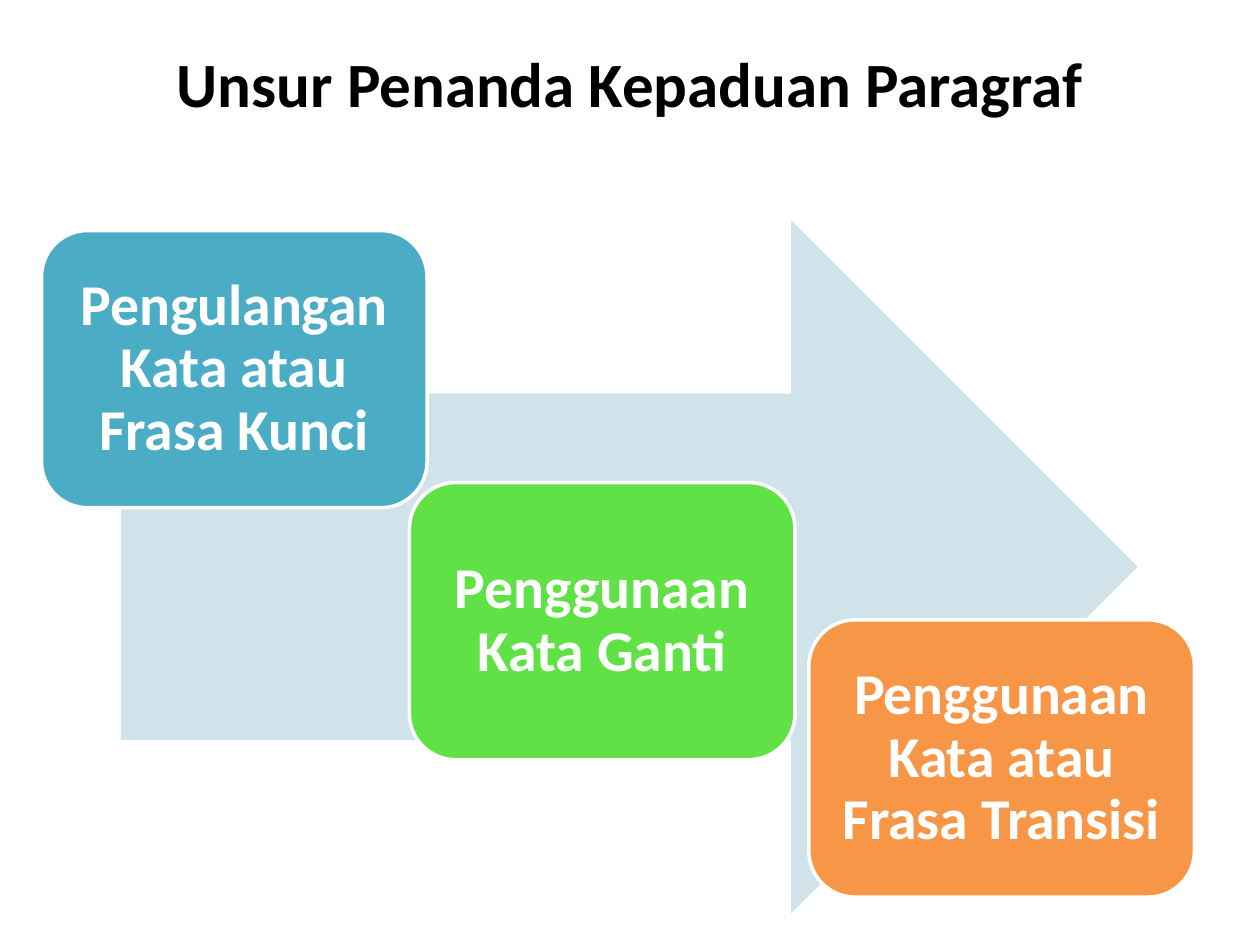
from dataclasses import dataclass

from pptx import Presentation
from pptx.dml.color import RGBColor
from pptx.enum.shapes import MSO_SHAPE as Shape
from pptx.enum.text import MSO_ANCHOR as Anchor, PP_ALIGN as Align
from pptx.util import Inches, Pt


@dataclass(frozen=True)
class Theme:
    font: str = "Calibri"
    title_size: int = 36
    card_size: int = 33
    black: str = "000000"
    white: str = "FFFFFF"
    arrow: str = "D0E3EA"
    blue: str = "4BACC6"
    green: str = "60E146"
    orange: str = "F79646"


class SlideBuilder:
    """Holds the theme and the slide being filled."""

    def __init__(self, deck, theme):
        self.theme = theme
        self.slide = deck.slides.add_slide(deck.slide_layouts[5])

    def set_text(self, frame, text, size, color):
        frame.text = text
        frame.word_wrap = True
        para = frame.paragraphs[0]
        para.alignment = Align.CENTER
        for span in para.runs:
            span.font.name = self.theme.font
            span.font.size = Pt(size)
            span.font.bold = True
            span.font.color.rgb = RGBColor.from_string(color)
        return para

    def title(self, text, left, top, width, height):
        box = self.slide.shapes.title
        box.left, box.top = Inches(left), Inches(top)
        box.width, box.height = Inches(width), Inches(height)
        box.text_frame.vertical_anchor = Anchor.TOP
        self.set_text(box.text_frame, text, self.theme.title_size, self.theme.black)

    def shape(self, kind, left, top, width, height, fill):
        shape = self.slide.shapes.add_shape(
            kind, Inches(left), Inches(top), Inches(width), Inches(height))
        shape.shadow.inherit = False
        shape.fill.solid()
        shape.fill.fore_color.rgb = RGBColor.from_string(fill)
        shape.line.fill.background()
        return shape

    def card(self, text, left, top, fill):
        card = self.shape(Shape.ROUNDED_RECTANGLE, left, top, 3.06, 2.2, fill)
        card.line.color.rgb = RGBColor.from_string(self.theme.white)
        card.line.width = Pt(2)
        frame = card.text_frame
        frame.margin_left = frame.margin_right = Inches(0.14)
        frame.margin_top = frame.margin_bottom = Inches(0.14)
        frame.vertical_anchor = Anchor.MIDDLE
        para = self.set_text(frame, text, self.theme.card_size, self.theme.white)
        para.line_spacing = 0.9


def main():
    deck = Presentation()
    deck.slide_width, deck.slide_height = Inches(10), Inches(7.5)
    theme = Theme()
    builder = SlideBuilder(deck, theme)

    builder.title("Unsur Penanda Kepaduan Paragraf", 0.5, 0.3, 9, 1.25)
    builder.shape(Shape.RIGHT_ARROW, 0.96, 1.75, 8.07, 5.5, theme.arrow)
    cards = [
        ("Pengulangan Kata atau Frasa Kunci", 0.33, 1.83, theme.blue),
        ("Penggunaan Kata Ganti", 3.25, 3.83, theme.green),
        ("Penggunaan Kata atau Frasa Transisi", 6.42, 4.92, theme.orange),
    ]
    for text, left, top, fill in cards:
        builder.card(text, left, top, fill)

    deck.save("out.pptx")


if __name__ == "__main__":
    main()
